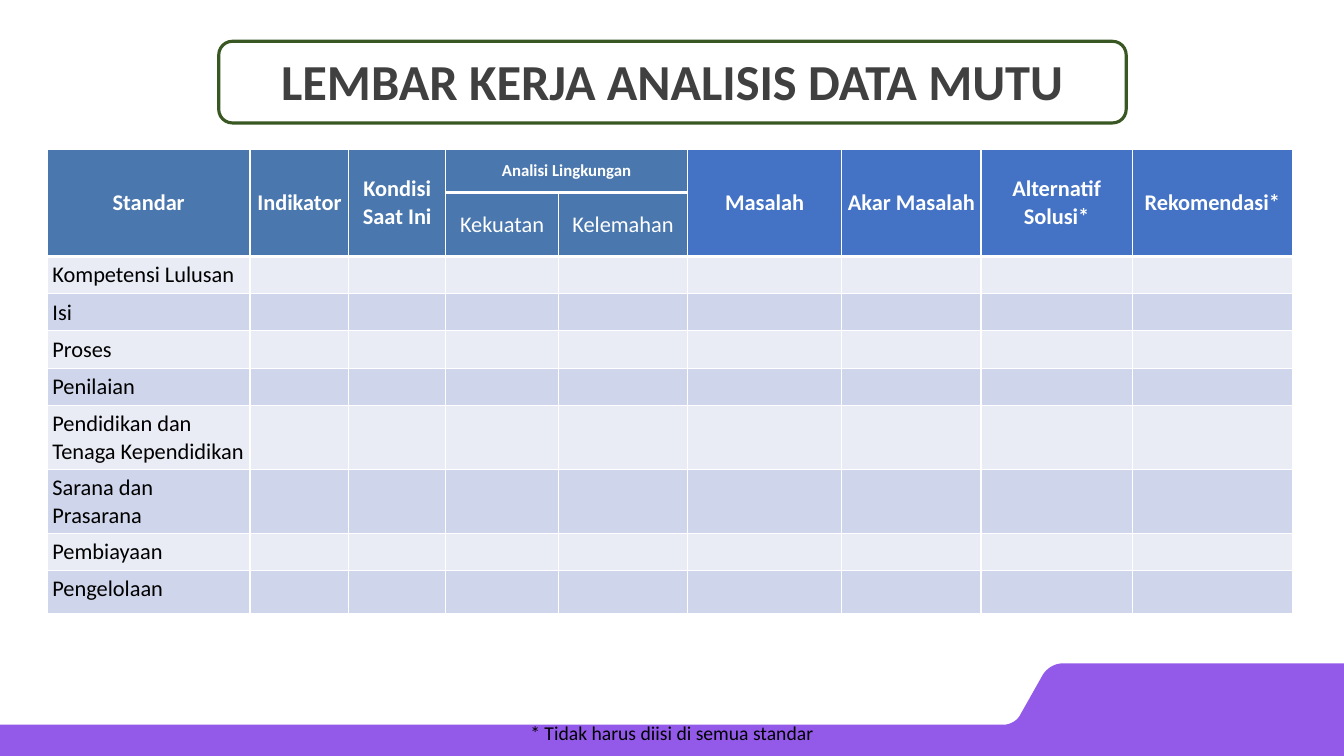
"""Build the quality data analysis worksheet slide."""
from lxml.etree import SubElement
from pptx import Presentation
from pptx.dml.color import RGBColor
from pptx.enum.shapes import MSO_SHAPE
from pptx.enum.text import MSO_ANCHOR, PP_ALIGN
from pptx.oxml.ns import qn
from pptx.util import Inches, Pt

WHITE = RGBColor(0xFF, 0xFF, 0xFF)
BLACK = RGBColor(0, 0, 0)
CHARCOAL = RGBColor(0x40, 0x40, 0x40)
GREEN = RGBColor(0x38, 0x57, 0x23)
PURPLE = RGBColor(0x93, 0x5A, 0xE9)
STEEL = RGBColor(0x4A, 0x77, 0xAD)
BLUE = RGBColor(0x44, 0x72, 0xC4)
BANDS = [RGBColor(0xE9, 0xEB, 0xF5), RGBColor(0xCF, 0xD5, 0xEA)]


def write_text(frame, text, size=16, color=BLACK, bold=False,
               align=PP_ALIGN.CENTER, spacing=1.0):
    frame.word_wrap = True
    paragraph = frame.paragraphs[0]
    paragraph.alignment = align
    paragraph.line_spacing = spacing
    run = paragraph.add_run()
    run.text = text
    run.font.name = "Calibri"
    run.font.size = Pt(size)
    run.font.bold = bold
    run.font.color.rgb = color


def set_border(cell, side, width):
    line = SubElement(cell._tc.get_or_add_tcPr(), qn(f"a:ln{side}"), w=str(Pt(width)))
    fill = SubElement(line, qn("a:solidFill"))
    SubElement(fill, qn("a:srgbClr"), val=str(WHITE))


presentation = Presentation()
presentation.slide_width = Inches(13.33)
presentation.slide_height = Inches(7.5)
slide = presentation.slides.add_slide(presentation.slide_layouts[6])
shapes = slide.shapes

curves = [
    [(10.55, 6.58), (10.46, 6.58), (10.38, 6.63), (10.34, 6.7)],
    [(10.12, 7.09), (10.09, 7.15), (10.02, 7.19), (9.95, 7.19)],
]
STEPS = 12
outline = []
for curve in curves:
    for step in range(STEPS + 1):
        t = step / STEPS
        weights = [(1 - t) ** 3, 3 * t * (1 - t) ** 2, 3 * t ** 2 * (1 - t), t ** 3]
        outline.append(tuple(
            sum(weight * point[axis] for weight, point in zip(weights, curve))
            for axis in (0, 1)))
outline += [(0, 7.19), (0, 7.5), (13.33, 7.5), (13.33, 6.58)]
corners = [(Inches(x), Inches(y)) for x, y in outline]
builder = shapes.build_freeform(*corners[0])
builder.add_line_segments(corners[1:], close=True)
footer_band = builder.convert_to_shape()
footer_band.shadow.inherit = False
footer_band.fill.solid()
footer_band.fill.fore_color.rgb = PURPLE
footer_band.line.fill.background()

title = shapes.add_textbox(Inches(0.92), Inches(0.11), Inches(11.5), Inches(1.45))
title.text_frame.vertical_anchor = MSO_ANCHOR.MIDDLE
write_text(title.text_frame, "LEMBAR KERJA ANALISIS DATA MUTU",
           size=36, color=CHARCOAL, bold=True, spacing=0.9)

title_frame = shapes.add_shape(
    MSO_SHAPE.ROUNDED_RECTANGLE, Inches(2.17), Inches(0.41), Inches(9), Inches(0.81))
title_frame.shadow.inherit = False
title_frame.fill.background()
title_frame.line.color.rgb = GREEN
title_frame.line.width = Pt(2.25)

footnote = shapes.add_textbox(Inches(4.28), Inches(7.1), Inches(4.77), Inches(0.34))
write_text(footnote.text_frame, "* Tidak harus diisi di semua standar", size=14)

headings = ["Standar", "Indikator", "Kondisi Saat Ini", "Analisi Lingkungan", "",
            "Masalah", "Akar Masalah", "Alternatif Solusi*", "Rekomendasi*"]
subheadings = {3: "Kekuatan", 4: "Kelemahan"}
standards = ["Kompetensi Lulusan", "Isi", "Proses", "Penilaian",
             "Pendidikan dan Tenaga Kependidikan", "Sarana dan Prasarana",
             "Pembiayaan", "Pengelolaan"]
column_widths = [2.01, 0.98, 0.96, 1.12, 1.28, 1.53, 1.38, 1.5, 1.59]
row_heights = [0.43, 0.63, 0.37, 0.37, 0.37, 0.37, 0.63, 0.63, 0.37, 0.43]

worksheet = shapes.add_table(
    len(row_heights), len(column_widths), Inches(0.47), Inches(1.48),
    Inches(sum(column_widths)), Inches(sum(row_heights))).table
for column, width in zip(worksheet.columns, column_widths):
    column.width = Inches(width)
for row, height in zip(worksheet.rows, row_heights):
    row.height = Inches(height)

for row in range(len(row_heights)):
    for column in range(len(column_widths)):
        cell = worksheet.cell(row, column)
        header = row < 2
        rule = 2.25 if column in subheadings else 3
        for side, width in [("L", 1), ("R", 1), ("T", rule if row == 2 else 1),
                            ("B", rule if header else 1)]:
            set_border(cell, side, width)
        cell.fill.solid()
        if header:
            cell.fill.fore_color.rgb = STEEL if column < 5 else BLUE
            text = headings[column] if row == 0 else subheadings.get(column, "")
        else:
            cell.fill.fore_color.rgb = BANDS[row % 2]
            text = standards[row - 2] if column == 0 else ""
        cell.margin_left = cell.margin_right = Inches(0.05)
        cell.margin_top = cell.margin_bottom = Inches(0.05 if text else 0)
        if text and header:
            cell.vertical_anchor = MSO_ANCHOR.MIDDLE
            write_text(cell.text_frame, text, color=WHITE, bold=row == 0,
                       size=12 if column == 3 and row == 0 else 16)
        elif text:
            write_text(cell.text_frame, text, align=PP_ALIGN.LEFT)

worksheet.cell(0, 3).merge(worksheet.cell(0, 4))
for column in range(len(headings)):
    if column not in subheadings:
        worksheet.cell(0, column).merge(worksheet.cell(1, column))

presentation.save("out.pptx")
